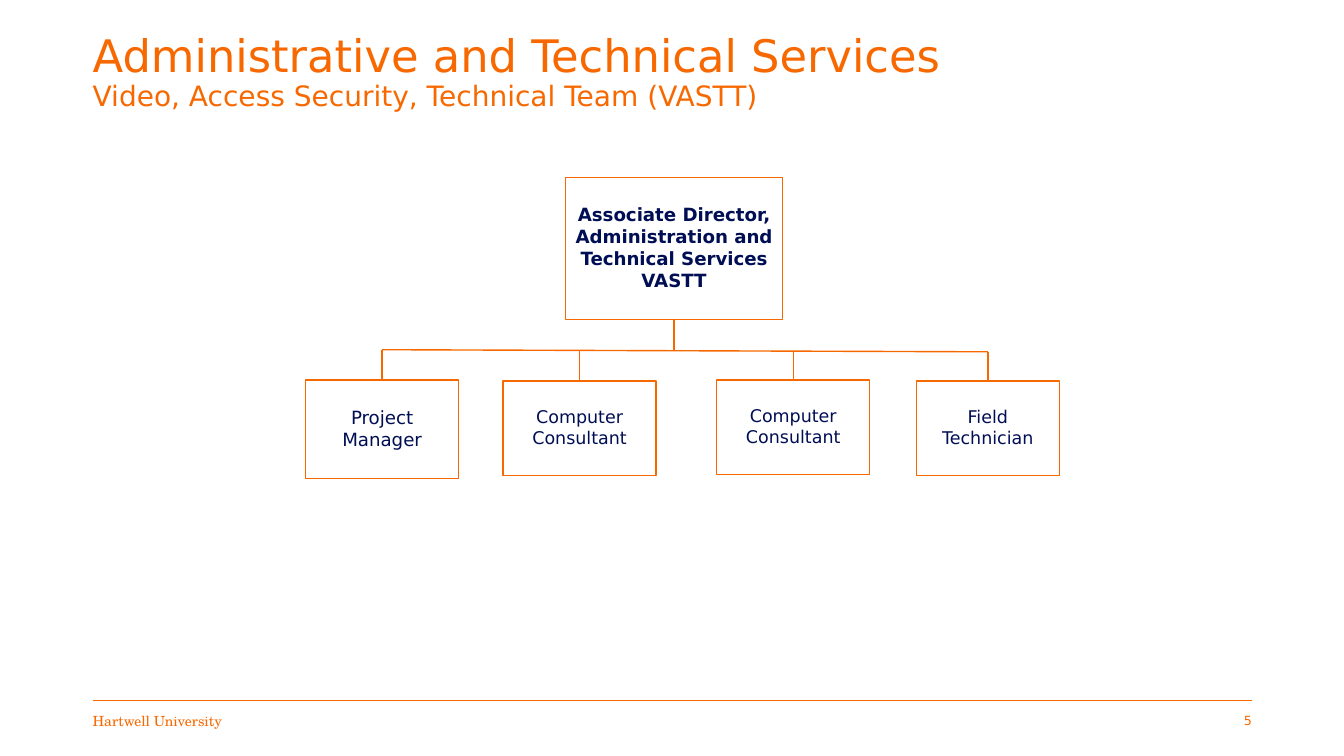
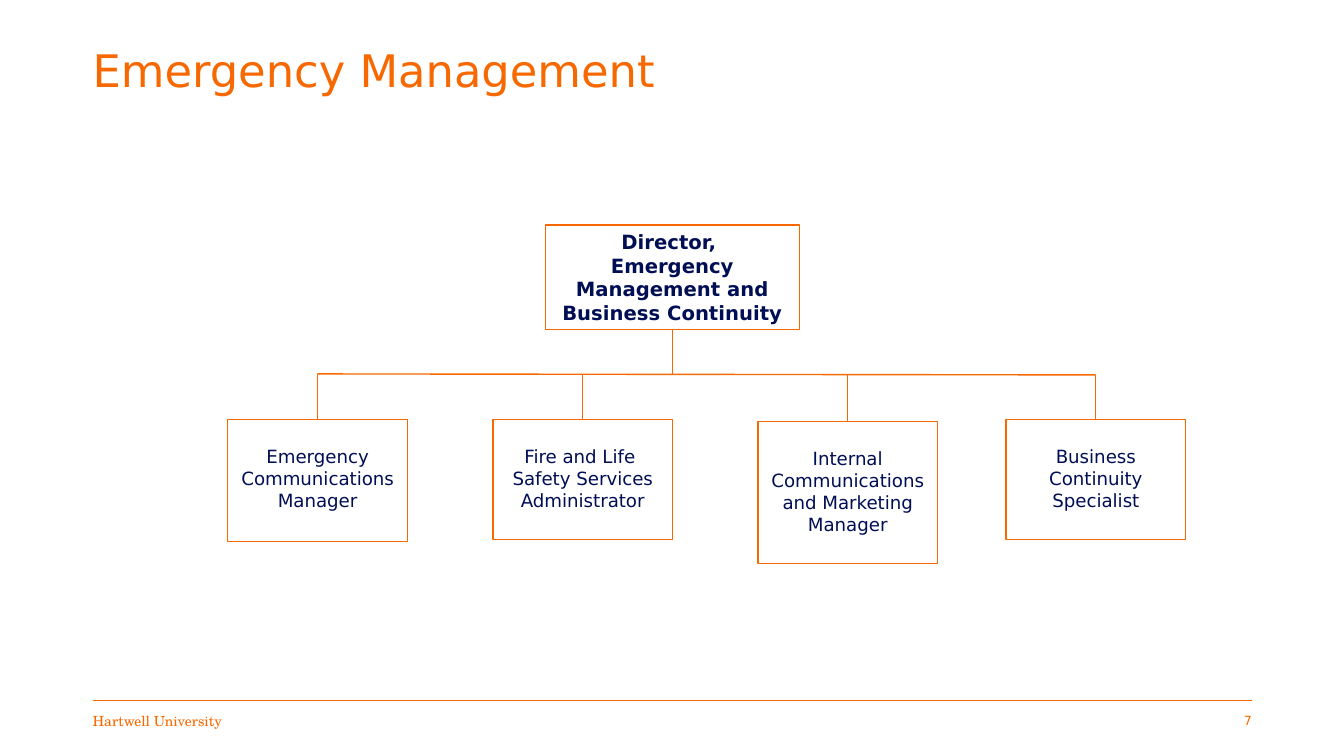
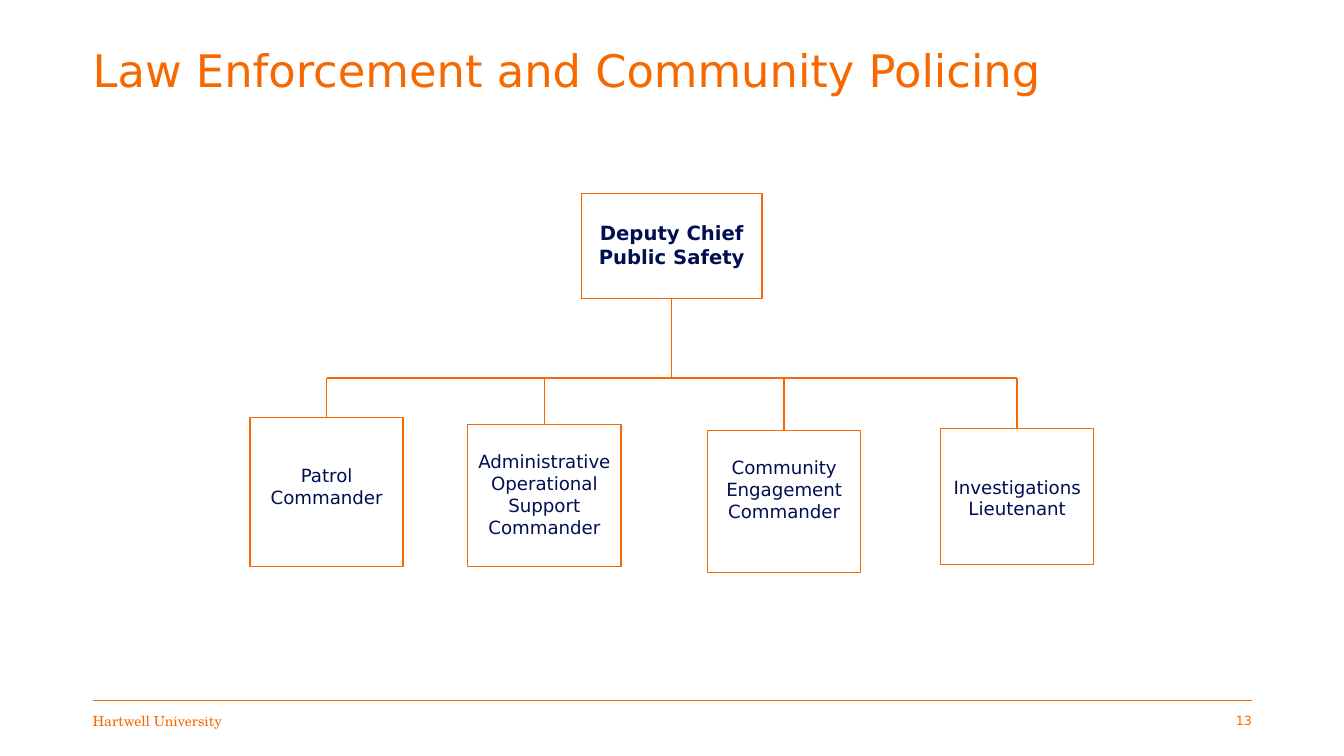
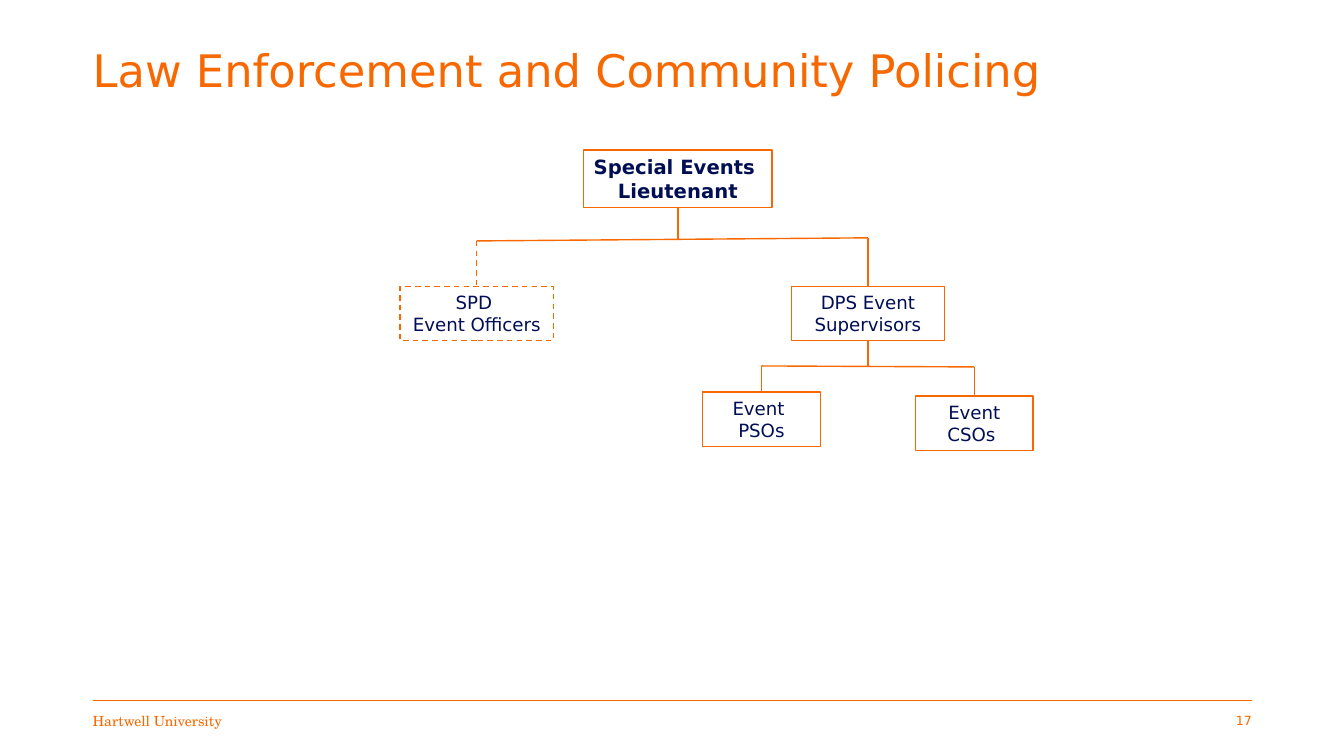
import pptx
import pptx.dml.color
import pptx.enum.dml
import pptx.enum.shapes
import pptx.enum.text
import pptx.oxml
import pptx.util

Pt = pptx.util.Pt
RGBColor = pptx.dml.color.RGBColor
ALIGN = pptx.enum.text.PP_ALIGN
ANCHOR = pptx.enum.text.MSO_ANCHOR

# Shared style
ORANGE = RGBColor(0xF7, 0x69, 0x00)
NAVY = RGBColor(0x00, 0x0E, 0x54)
SANS = "DejaVu Sans"
SERIF = "TeX Gyre Schola"
LEFT, WIDTH = 66.2, 828
FOOTER_TOP, FOOTER_W, FOOTER_H = 500.4, 151.2, 28.8
LINE_HEIGHT = 1.164  # height of one text line relative to its size


# Text
def add_text(tf, text, size=13, color=ORANGE, font=SANS, bold=False,
             align=ALIGN.LEFT, spacing=1.0):
    """Add one paragraph for each line of text."""
    for line in text.split("\n"):
        p = tf.add_paragraph() if tf.text else tf.paragraphs[0]
        p.alignment = align
        p.line_spacing = spacing
        r = p.add_run()
        r.text = line
        r.font.size = Pt(size)
        r.font.name = font
        r.font.bold = bold
        r.font.color.rgb = color


def set_frame(tf, anchor, side=0, top=3.6):
    tf.word_wrap = True
    tf.auto_size = pptx.enum.text.MSO_AUTO_SIZE.NONE
    tf.vertical_anchor = anchor
    tf.margin_left = tf.margin_right = Pt(side)
    tf.margin_top, tf.margin_bottom = Pt(top), Pt(3.6)


# Lines and boxes
def style_line(line, width=1, dashed=False):
    line.color.rgb = ORANGE
    line.width = Pt(width)
    if dashed:
        line.dash_style = pptx.enum.dml.MSO_LINE.DASH


def add_line(s, x1, y1, x2, y2, **style):
    kind = pptx.enum.shapes.MSO_CONNECTOR.STRAIGHT
    c = s.shapes.add_connector(kind, Pt(x1), Pt(y1), Pt(x2), Pt(y2))
    style_line(c.line, **style)
    c._element.spPr.append(pptx.oxml.parse_xml(
        '<a:effectLst xmlns:a='
        '"http://schemas.openxmlformats.org/drawingml/2006/main"/>'))


def add_box(s, text, x, y, w, h, size=13, bold=False, skip=1,
            anchor=ANCHOR.TOP, dashed=False):
    """Draw a position; its text starts `skip` lines below the top."""
    sp = s.shapes.add_shape(pptx.enum.shapes.MSO_SHAPE.RECTANGLE,
                            Pt(x), Pt(y), Pt(w), Pt(h))
    sp.shadow.inherit = False
    sp.fill.background()
    style_line(sp.line, dashed=dashed)
    set_frame(sp.text_frame, anchor, side=6,
              top=3.6 + skip * size * LINE_HEIGHT)
    add_text(sp.text_frame, text, size=size, color=NAVY, bold=bold,
             align=ALIGN.CENTER)
    return sp


def connect(s, parent, children, bus_left, bus_right, dashed=()):
    """Join a parent to its children by a stem, a bus and drops."""
    def center(sp):
        return (sp.left + sp.width / 2) / Pt(1)

    x1, x2 = center(children[0]), center(children[-1])

    def bus_y(x):
        return bus_left + (bus_right - bus_left) * (x - x1) / (x2 - x1)

    x = center(parent)
    add_line(s, x, (parent.top + parent.height) / Pt(1), x, bus_y(x))
    add_line(s, x1, bus_left, x2, bus_right)
    for i, child in enumerate(children):
        x = center(child)
        add_line(s, x, bus_y(x), x, child.top / Pt(1), dashed=i in dashed)


# Slide frame
def add_footer(s, text, x, **fmt):
    tb = s.shapes.add_textbox(Pt(x), Pt(FOOTER_TOP), Pt(FOOTER_W), Pt(FOOTER_H))
    set_frame(tb.text_frame, ANCHOR.MIDDLE)
    add_text(tb.text_frame, text, **fmt)


def new_slide(prs, title, number, subtitle=None):
    s = prs.slides.add_slide(prs.slide_layouts[5])
    sp = s.shapes.title
    sp.left, sp.top, sp.width, sp.height = Pt(LEFT), Pt(0), Pt(WIDTH), Pt(104.4)
    set_frame(sp.text_frame, ANCHOR.MIDDLE)
    add_text(sp.text_frame, title, size=32, spacing=0.9)
    if subtitle:
        add_text(sp.text_frame, subtitle, size=20, spacing=0.9)
    add_line(s, LEFT, FOOTER_TOP, LEFT + WIDTH, FOOTER_TOP, width=0.5)
    add_footer(s, "Hartwell University", LEFT, size=10, font=SERIF)
    add_footer(s, str(number), LEFT + WIDTH - FOOTER_W, size=9,
               align=ALIGN.RIGHT)
    return s


# Slides
def technical_services(prs):
    s = new_slide(prs, "Administrative and Technical Services", 5,
                  "Video, Access Security, Technical Team (VASTT)")
    head = add_box(s, "Associate Director, Administration and Technical Services"
                   "\nVASTT", 404, 126.7, 154.8, 101.5, bold=True)
    team = [
        add_box(s, "Project Manager", 218.2, 271.4, 109.4, 70.6),
        add_box(s, "Computer Consultant", 359.3, 272.2, 109.4, 67.7, size=12.5),
        add_box(s, "Computer Consultant", 511.9, 271.4, 109.4, 67.7, size=12.5),
        add_box(s, "Field Technician", 654.5, 272.2, 102.2, 67.7, size=12.5),
    ]
    connect(s, head, team, 249.8, 251.3)


def emergency_management(prs):
    s = new_slide(prs, "Emergency Management", 7)
    head = add_box(s, "Director, \nEmergency Management and Business Continuity",
                   389.5, 160.6, 181.4, 74.9, size=14, bold=True, skip=0,
                   anchor=ANCHOR.MIDDLE)
    w = 128.2
    team = [
        add_box(s, "Emergency Communications Manager", 162.7, 299.5, w, 87.1),
        add_box(s, "Fire and Life \nSafety Services\nAdministrator",
                352.1, 299.5, w, 85.7),
        add_box(s, "Internal Communications and Marketing Manager",
                541.4, 301, w, 101.5),
        add_box(s, "Business Continuity Specialist", 718.6, 299.5, w, 85.7),
    ]
    connect(s, head, team, 267.1, 267.8)


def law_enforcement(prs):
    s = new_slide(prs, "Law Enforcement and Community Policing", 13)
    head = add_box(s, "Deputy Chief\nPublic Safety", 415.4, 138.2, 128.9, 74.9,
                   size=14, bold=True)
    w = 109.4
    team = [
        add_box(s, "Patrol\nCommander", 178.6, 298.1, w, 106.6, skip=2),
        add_box(s, "Administrative\nOperational\nSupport\nCommander",
                334.1, 303.1, w, 101.5),
        add_box(s, "Community Engagement\nCommander", 505.4, 307.4, w, 101.5),
        add_box(s, "Investigations\nLieutenant", 671.8, 306, w, 97.2, skip=2),
    ]
    connect(s, head, team, 270, 270)


def special_events(prs):
    s = new_slide(prs, "Law Enforcement and Community Policing", 17)
    head = add_box(s, "Special Events \nLieutenant", 416.9, 107.3, 134.6, 41,
                   size=14, bold=True, skip=0)
    h = 38.9
    officers = add_box(s, "SPD \nEvent Officers", 285.8, 204.5, 109.4, h,
                       skip=0, dashed=True)
    supervisors = add_box(s, "DPS Event\nSupervisors", 565.2, 204.5, 109.4, h,
                          skip=0)
    staff = [
        add_box(s, "Event \nPSOs", 501.8, 280.1, 84.2, h, skip=0),
        add_box(s, "Event CSOs ", 653.8, 283, 84.2, h, skip=0),
    ]
    connect(s, head, [officers, supervisors], 172.1, 169.9, dashed=(0,))
    connect(s, supervisors, staff, 261.4, 262.1)


def main():
    prs = pptx.Presentation()
    prs.slide_width, prs.slide_height = Pt(960), Pt(540)
    technical_services(prs)
    emergency_management(prs)
    law_enforcement(prs)
    special_events(prs)
    prs.save("out.pptx")


if __name__ == "__main__":
    main()
